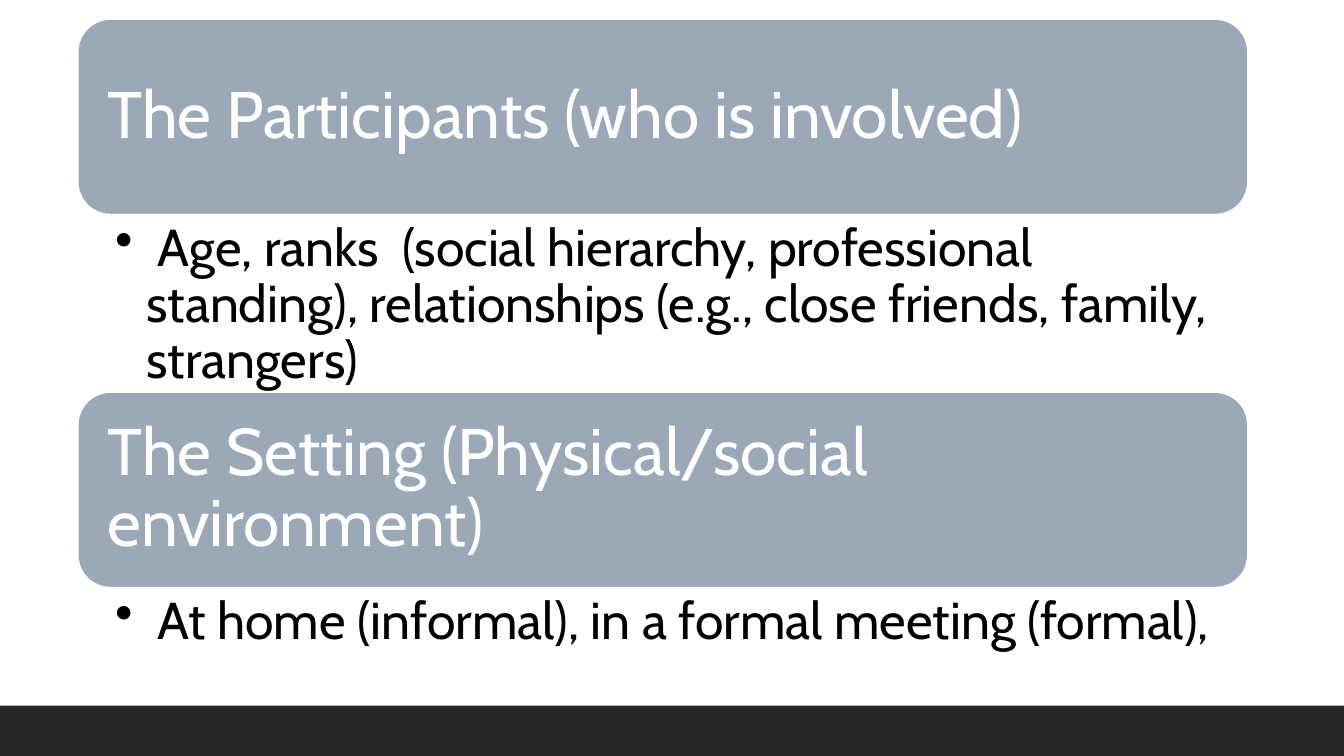
"""Build a slide of two context factors, each a rounded heading above a bullet."""
from dataclasses import dataclass

from lxml.etree import SubElement
from pptx import Presentation
from pptx.dml.color import RGBColor
from pptx.enum.shapes import MSO_SHAPE
from pptx.enum.text import MSO_ANCHOR, PP_ALIGN
from pptx.oxml.ns import qn
from pptx.util import Cm, Pt

SECTIONS = [
    {
        "heading": "The Participants (who is involved)",
        "detail": " Age, ranks  (social hierarchy, professional standing), "
                  "relationships (e.g., close friends, family, strangers)",
        "detail_height": Cm(4.47),
    },
    {
        "heading": "The Setting (Physical/social environment)",
        "detail": " At home (informal), in a formal meeting (formal),",
        "detail_height": Cm(2.16),
    },
]


@dataclass(frozen=True)
class Theme:
    """Colours, font and type sizes of the slide."""
    panel: RGBColor = RGBColor(0x9B, 0xA8, 0xB7)
    footer: RGBColor = RGBColor(0x26, 0x26, 0x26)
    light: RGBColor = RGBColor(0xFF, 0xFF, 0xFF)
    dark: RGBColor = RGBColor(0x00, 0x00, 0x00)
    font: str = "Cabin"
    heading_size: Pt = Pt(47)
    detail_size: Pt = Pt(37)
    outline: Pt = Pt(1.25)


THEME = Theme()
SLIDE_WIDTH, SLIDE_HEIGHT = Cm(33.87), Cm(19.05)
FOOTER_HEIGHT = Cm(1.27)
LEFT, TOP, WIDTH = Cm(1.96), Cm(0.48), Cm(29.49)
HEADING_HEIGHT = Cm(4.93)
HEADING_INSET = Cm(0.51)
DETAIL_INSET_X, DETAIL_INSET_Y = Cm(0.94), Cm(0.18)
BULLET_INDENT = Cm(0.79)


def add_panel(slide, kind, left, top, width, height, color):
    """Add a filled shape without outline or shadow."""
    shape = slide.shapes.add_shape(kind, left, top, width, height)
    shape.shadow.inherit = False
    shape.fill.solid()
    shape.fill.fore_color.rgb = color
    shape.line.fill.background()
    return shape


def write(shape, text, size, color, inset_x, inset_y):
    """Fill a shape with one wrapped, left-aligned paragraph."""
    frame = shape.text_frame
    frame.word_wrap = True
    frame.margin_left = frame.margin_right = inset_x
    frame.margin_top = frame.margin_bottom = inset_y
    paragraph = frame.paragraphs[0]
    paragraph.text = text
    paragraph.alignment = PP_ALIGN.LEFT
    paragraph.line_spacing = 0.9
    paragraph.font.name = THEME.font
    paragraph.font.size = size
    paragraph.font.color.rgb = color
    return paragraph


def add_bullet(paragraph):
    """Give a paragraph a round bullet with a hanging indent."""
    paragraph.level = 1
    properties = paragraph._p.get_or_add_pPr()
    properties.set("marL", str(BULLET_INDENT))
    properties.set("indent", str(-BULLET_INDENT))
    bullet = SubElement(properties, qn("a:buChar"), char="•")
    properties.find(qn("a:defRPr")).addprevious(bullet)


def add_section(slide, section, top):
    """Add a heading panel with its bullet and return the bottom edge."""
    panel = add_panel(slide, MSO_SHAPE.ROUNDED_RECTANGLE, LEFT, top, WIDTH,
                      HEADING_HEIGHT, THEME.panel)
    panel.line.color.rgb = THEME.light
    panel.line.width = THEME.outline
    panel.text_frame.vertical_anchor = MSO_ANCHOR.MIDDLE
    write(panel, section["heading"], THEME.heading_size, THEME.light,
          HEADING_INSET, HEADING_INSET)

    detail_top = top + HEADING_HEIGHT
    detail = slide.shapes.add_textbox(LEFT, detail_top, WIDTH, section["detail_height"])
    add_bullet(write(detail, section["detail"], THEME.detail_size, THEME.dark,
                     DETAIL_INSET_X, DETAIL_INSET_Y))
    return detail_top + section["detail_height"]


def main():
    """Build and save the presentation."""
    presentation = Presentation()
    presentation.slide_width = SLIDE_WIDTH
    presentation.slide_height = SLIDE_HEIGHT
    slide = presentation.slides.add_slide(presentation.slide_layouts[6])
    add_panel(slide, MSO_SHAPE.RECTANGLE, 0, SLIDE_HEIGHT - FOOTER_HEIGHT,
              SLIDE_WIDTH, FOOTER_HEIGHT, THEME.footer)
    top = TOP
    for section in SECTIONS:
        top = add_section(slide, section, top)
    presentation.save("out.pptx")


if __name__ == "__main__":
    main()
